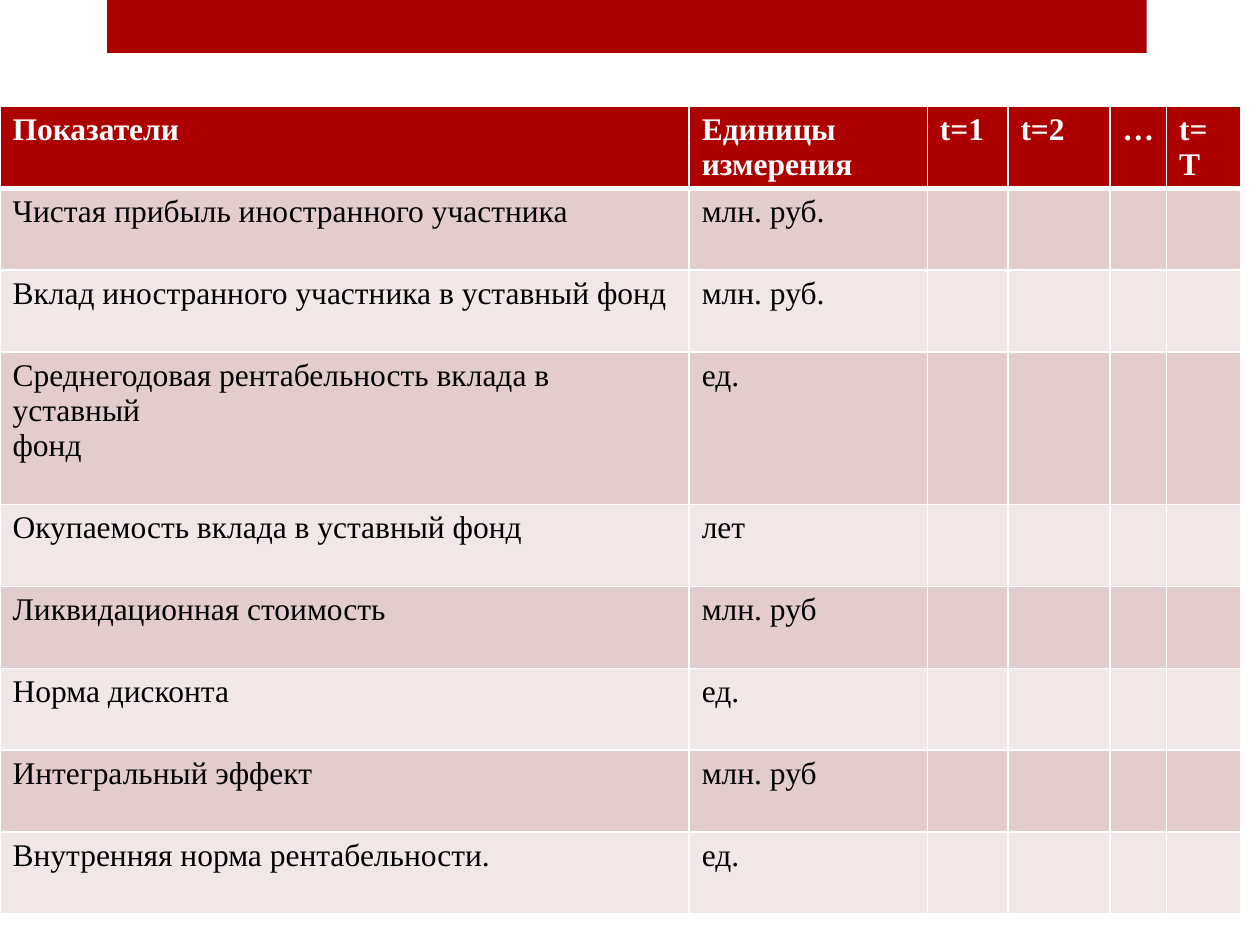
from lxml import etree
from pptx import Presentation
from pptx.dml.color import RGBColor
from pptx.enum.shapes import MSO_SHAPE
from pptx.oxml.ns import qn
from pptx.util import Inches, Pt

RECT = MSO_SHAPE.RECTANGLE
RED = RGBColor(0xAD, 0x01, 0x01)
ROSE = RGBColor(0xE3, 0xCC, 0xCC)
PALE = RGBColor(0xF1, 0xE7, 0xE7)
WHITE = RGBColor(0xFF, 0xFF, 0xFF)
BLACK = RGBColor(0, 0, 0)
FONT = "Times New Roman"

HEAD = ["Показатели", "Единицы измерения", "t=1", "t=2", "…", "t=T"]
ROWS = [
    ("Чистая прибыль иностранного участника", "млн. руб."),
    ("Вклад иностранного участника в уставный фонд", "млн. руб."),
    ("Среднегодовая рентабельность вклада в уставный\nфонд", "ед."),
    ("Окупаемость вклада в уставный фонд", "лет"),
    ("Ликвидационная стоимость", "млн. руб"),
    ("Норма дисконта", "ед."),
    ("Интегральный эффект", "млн. руб"),
    ("Внутренняя норма рентабельности.", "ед."),
]
COLS = [5.47, 1.89, 0.64, 0.81, 0.45, 0.59]
TOP, HEAD_H, ROW_H, TALL_H = 0.84, 0.65, 0.65, 1.21


def add_edges(cell, row):
    props = cell._tc.get_or_add_tcPr()
    thick = {0: "lnB", 1: "lnT"}.get(row)
    for side in ("lnL", "lnR", "lnT", "lnB"):
        width = Pt(3 if side == thick else 1)
        line = etree.SubElement(props, qn("a:" + side), w=str(width))
        fill = etree.SubElement(line, qn("a:solidFill"))
        etree.SubElement(fill, qn("a:srgbClr"), val=str(WHITE))


def fill_cell(cell, text, row):
    add_edges(cell, row)
    cell.fill.solid()
    cell.fill.fore_color.rgb = RED if row == 0 else ROSE if row % 2 else PALE
    frame = cell.text_frame
    for i, part in enumerate(text.split("\n") if text else []):
        para = frame.add_paragraph() if i else frame.paragraphs[0]
        run = para.add_run()
        run.text = part
        font = run.font
        font.name, font.size, font.bold = FONT, Pt(18), row == 0
        font.color.rgb = BLACK if row else WHITE


def main():
    deck = Presentation()
    deck.slide_width, deck.slide_height = Inches(10), Inches(7.5)
    slide = deck.slides.add_slide(deck.slide_layouts[6])

    band = slide.shapes.add_shape(
        RECT, Inches(0.85), 0, Inches(8.25), Inches(0.42))
    band.shadow.inherit = False
    band.fill.solid()
    band.fill.fore_color.rgb = RED
    band.line.fill.background()

    data = [HEAD] + [[*row] + [""] * (len(COLS) - len(row)) for row in ROWS]
    highs = [HEAD_H] + [TALL_H if "\n" in row[0] else ROW_H for row in ROWS]
    table = slide.shapes.add_table(
        len(data), len(COLS), 0, Inches(TOP),
        Inches(sum(COLS)), Inches(sum(highs))).table
    for col, width in zip(table.columns, COLS):
        col.width = Inches(width)
    for r, (texts, high) in enumerate(zip(data, highs)):
        table.rows[r].height = Inches(high)
        for c, text in enumerate(texts):
            fill_cell(table.cell(r, c), text, r)

    deck.save("out.pptx")


if __name__ == "__main__":
    main()
